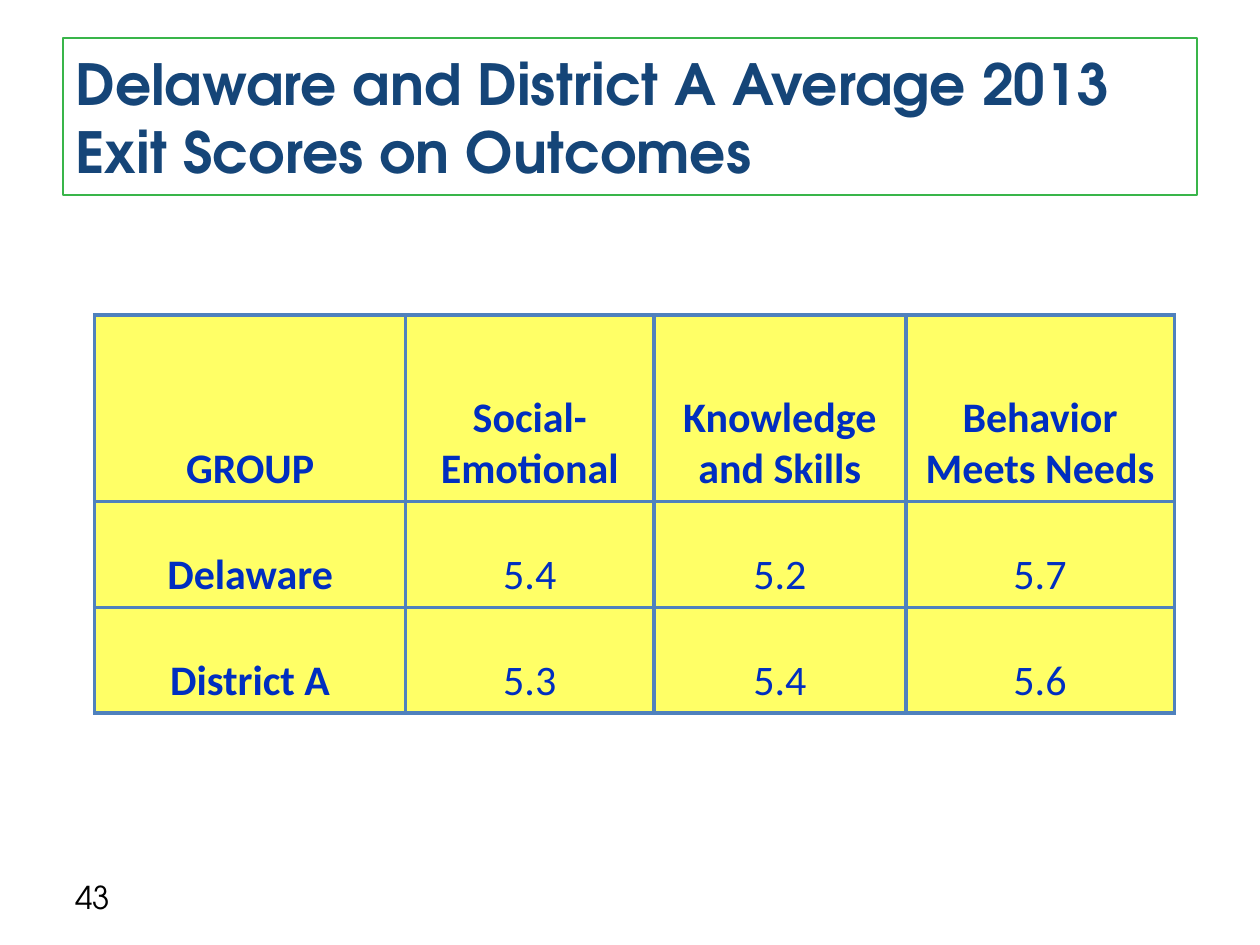
import dataclasses

import pptx
import pptx.dml.color
import pptx.enum.shapes
import pptx.enum.text
import pptx.oxml
import pptx.oxml.ns
import pptx.util

ANCHOR = pptx.enum.text.MSO_ANCHOR
ALIGN = pptx.enum.text.PP_ALIGN


def color(code):
    return pptx.dml.color.RGBColor.from_string(code)


@dataclasses.dataclass(frozen=True)
class Theme:
    head: str = "TeX Gyre Adventor"
    body: str = "Calibri"
    navy: str = "154578"
    green: str = "39B54A"
    black: str = "000000"
    blue: str = "002EC0"
    yellow: str = "FFFF66"
    edge: str = "4F81BD"
    title: float = 32.4
    cell: float = 24
    foot: float = 18
    rule: float = 2.25


class Deck:
    """Draw styled elements on a slide laid out as a grid of 20 columns by 15 rows."""

    def __init__(self, theme):
        self.theme = theme
        self.show = pptx.Presentation()
        self.show.slide_width = pptx.util.Inches(10)
        self.show.slide_height = pptx.util.Inches(7.5)
        self.slide = self.show.slides.add_slide(self.show.slide_layouts[6])

    def col(self, count):
        return round(self.show.slide_width * count / 20)

    def row(self, count):
        return round(self.show.slide_height * count / 15)

    def place(self, left, top, width, height):
        return self.col(left), self.row(top), self.col(width), self.row(height)

    def letter(self, frame, text, tint, align=ALIGN.LEFT, **font):
        frame.word_wrap = True
        frame.text = text
        for para in frame.paragraphs:
            para.alignment = align
            para.font.color.rgb = color(tint)
            for name, value in font.items():
                setattr(para.font, name, value)

    def title(self, text, *spot):
        look = self.theme
        kind = pptx.enum.shapes.MSO_SHAPE.RECTANGLE
        box = self.slide.shapes.add_shape(kind, *self.place(*spot))
        box.shadow.inherit = False
        box.fill.background()
        box.line.color.rgb = color(look.green)
        box.line.width = pptx.util.Pt(1)
        box.text_frame.vertical_anchor = ANCHOR.MIDDLE
        self.letter(box.text_frame, text, look.navy, name=look.head,
                    size=pptx.util.Pt(look.title), bold=True)

    def label(self, text, *spot):
        look = self.theme
        box = self.slide.shapes.add_textbox(*self.place(*spot))
        box.text_frame.vertical_anchor = ANCHOR.MIDDLE
        self.letter(box.text_frame, text, look.black, name=look.head,
                    size=pptx.util.Pt(look.foot))

    def border(self, cell):
        space = pptx.oxml.ns.nsdecls("a")
        width = pptx.util.Pt(self.theme.rule)
        props = cell._tc.get_or_add_tcPr()
        for side in "LRTB":
            props.append(pptx.oxml.parse_xml(
                f'<a:ln{side} {space} w="{width}"><a:solidFill>'
                f'<a:srgbClr val="{self.theme.edge}"/></a:solidFill></a:ln{side}>'))

    def table(self, data, left, top, cols, rows):
        look = self.theme
        spot = self.place(left, top, sum(cols), sum(rows))
        grid = self.slide.shapes.add_table(len(rows), len(cols), *spot).table
        for part, width in zip(grid.columns, cols):
            part.width = self.col(width)
        for part, height in zip(grid.rows, rows):
            part.height = self.row(height)
        for down, line in enumerate(data):
            for over, text in enumerate(line):
                cell = grid.cell(down, over)
                self.border(cell)
                cell.fill.solid()
                cell.fill.fore_color.rgb = color(look.yellow)
                cell.vertical_anchor = ANCHOR.BOTTOM
                self.letter(cell.text_frame, text, look.blue, ALIGN.CENTER,
                            name=look.body, size=pptx.util.Pt(look.cell),
                            bold=down == 0 or over == 0)


def main():
    deck = Deck(Theme())
    deck.title("Delaware and District A Average 2013 Exit Scores on Outcomes",
               1, 0.6, 18, 2.5)
    deck.label("43", 1, 13.84, 4.66, 0.8)
    data = [
        ["GROUP", "Social-Emotional", "Knowledge\nand Skills", "Behavior\nMeets Needs"],
        ["Delaware", "5.4", "5.2", "5.7"],
        ["District A", "5.3", "5.4", "5.6"],
    ]
    deck.table(data, 1.5, 5, [4.94, 3.94, 4, 4.26], [2.96, 1.68, 1.68])
    deck.show.save("out.pptx")


if __name__ == "__main__":
    main()
